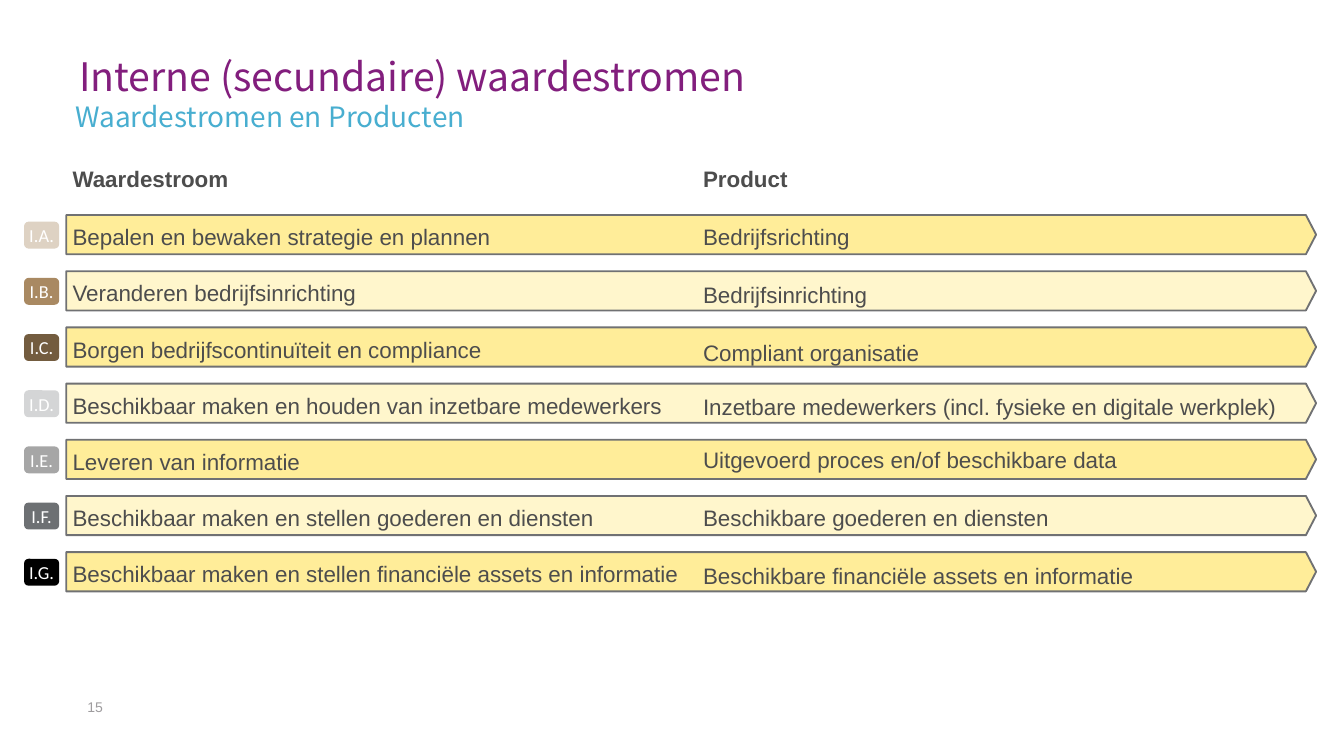
from dataclasses import dataclass

import pptx
import pptx.dml.color
import pptx.enum.shapes
import pptx.enum.text
import pptx.util

Pt = pptx.util.Pt
RGBColor = pptx.dml.color.RGBColor
MSO_SHAPE = pptx.enum.shapes.MSO_SHAPE
PP_ALIGN = pptx.enum.text.PP_ALIGN
MSO_ANCHOR = pptx.enum.text.MSO_ANCHOR

PURPLE = RGBColor(0x82, 0x1E, 0x7D)
BLUE = RGBColor(0x48, 0xAE, 0xD0)
TEXT_GREY = RGBColor(0x4D, 0x4D, 0x4D)
NUMBER_GREY = RGBColor(0x9E, 0x9C, 0x9E)
LINE_GREY = RGBColor(0x70, 0x71, 0x73)
WHITE = RGBColor(0xFF, 0xFF, 0xFF)
BANDS = (RGBColor(0xFF, 0xED, 0x99), RGBColor(0xFF, 0xF6, 0xCC))

ROW_TOP, ROW_PITCH = 115.2, 30.1
TITLE_FONT = "Noto Sans CJK TC"


@dataclass
class Box:
    left: float
    top: float
    width: float
    height: float

    def emu(self) -> tuple:
        return tuple(Pt(v) for v in (self.left, self.top, self.width, self.height))


@dataclass
class Line:
    text: str
    font: dict
    spacing: dict


@dataclass
class Stream:
    code: str
    color: RGBColor
    name: str
    product: str
    product_after: float = 4.5


STREAMS = [
    Stream("I.A.", RGBColor(0xDE, 0xD2, 0xC3),
           "Bepalen en bewaken strategie en plannen", "Bedrijfsrichting"),
    Stream("I.B.", RGBColor(0xA9, 0x89, 0x62),
           "Veranderen bedrijfsinrichting", "Bedrijfsinrichting"),
    Stream("I.C.", RGBColor(0x73, 0x5C, 0x3F),
           "Borgen bedrijfscontinuïteit en compliance", "Compliant organisatie", 2),
    Stream("I.D.", RGBColor(0xD4, 0xD5, 0xD6),
           "Beschikbaar maken en houden van inzetbare medewerkers",
           "Inzetbare medewerkers (incl. fysieke en digitale werkplek)", 2),
    Stream("I.E.", RGBColor(0xA6, 0xA6, 0xA6),
           "Leveren van informatie", "Uitgevoerd proces en/of beschikbare data"),
    Stream("I.F.", RGBColor(0x6D, 0x70, 0x73),
           "Beschikbaar maken en stellen goederen en diensten",
           "Beschikbare goederen en diensten"),
    Stream("I.G.", RGBColor(0x00, 0x00, 0x00),
           "Beschikbaar maken en stellen financiële assets en informatie",
           "Beschikbare financiële assets en informatie"),
]


def set_all(obj, values: dict) -> None:
    for name, value in values.items():
        setattr(obj, name, value)


def font_format(name: str, size: float, color: RGBColor, bold: bool = False) -> dict:
    return {"name": name, "size": Pt(size), "bold": bold, "color": color}


def write(tf, lines: list[Line], inset: float = 0) -> None:
    set_all(tf, {"word_wrap": True, "margin_left": 0, "margin_right": 0,
                 "margin_top": Pt(inset), "margin_bottom": Pt(inset)})
    for i, line in enumerate(lines):
        p = tf.add_paragraph() if i else tf.paragraphs[0]
        set_all(p, line.spacing)
        r = p.add_run()
        r.text = line.text
        set_all(r.font, {k: v for k, v in line.font.items() if k != "color"})
        r.font.color.rgb = line.font["color"]


def add_text(s, box: Box, lines: list[Line]) -> None:
    write(s.shapes.add_textbox(*box.emu()).text_frame, lines)


def add_shape(s, kind, box: Box, fill: RGBColor):
    sp = s.shapes.add_shape(kind, *box.emu())
    sp.shadow.inherit = False
    sp.fill.solid()
    sp.fill.fore_color.rgb = fill
    return sp


def add_arrow(s, top: float, fill: RGBColor) -> None:
    sp = add_shape(s, MSO_SHAPE.PENTAGON, Box(35.5, top, 669.6, 21), fill)
    sp.adjustments[0] = 0.26
    sp.line.color.rgb = LINE_GREY
    sp.line.width = Pt(1)


def add_tag(s, top: float, stream: Stream) -> None:
    sp = add_shape(s, MSO_SHAPE.ROUNDED_RECTANGLE, Box(12.9, top, 18.8, 14.4), stream.color)
    sp.line.fill.background()
    tf = sp.text_frame
    tf.vertical_anchor = MSO_ANCHOR.MIDDLE
    write(tf, [Line(stream.code, font_format("Calibri", 9.8, WHITE),
                    {"alignment": PP_ALIGN.CENTER})], 3.6)


def add_column(s, box: Box, heading: str, entries: list[tuple[str, float]]) -> None:
    lines = []
    for i, (text, after) in enumerate([(heading, 4.5)] + entries):
        spacing = {"line_spacing": 1.5, "space_before": Pt(5 if i else 0),
                   "space_after": Pt(after)}
        lines.append(Line(text, font_format("Arial", 12, TEXT_GREY, i == 0), spacing))
    add_text(s, box, lines)


def main() -> None:
    prs = pptx.Presentation()
    prs.slide_width, prs.slide_height = Pt(720), Pt(405)
    s = prs.slides.add_slide(prs.slide_layouts[6])

    add_text(s, Box(46.8, 374.4, 28, 17.3),
             [Line("15", font_format("Arial", 7.5, NUMBER_GREY), {})])
    add_text(s, Box(42.5, 25.2, 524, 28),
             [Line("Interne (secundaire) waardestromen",
                   font_format(TITLE_FONT, 21, PURPLE), {"line_spacing": Pt(28)})])
    add_text(s, Box(40.3, 49.7, 599, 17.3),
             [Line("Waardestromen en Producten",
                   font_format(TITLE_FONT, 15, BLUE), {"line_spacing": 1.2})])

    for i, stream in enumerate(STREAMS):
        top = ROW_TOP + i * ROW_PITCH
        add_arrow(s, top, BANDS[i % 2])
        add_tag(s, top + 3.6, stream)

    add_column(s, Box(376.6, 81.4, 339.8, 268.6), "Product",
               [(st.product, st.product_after) for st in STREAMS])
    add_column(s, Box(38.9, 81.4, 530.6, 268.6), "Waardestroom",
               [(st.name, 3.5) for st in STREAMS])

    prs.save("out.pptx")


if __name__ == "__main__":
    main()
